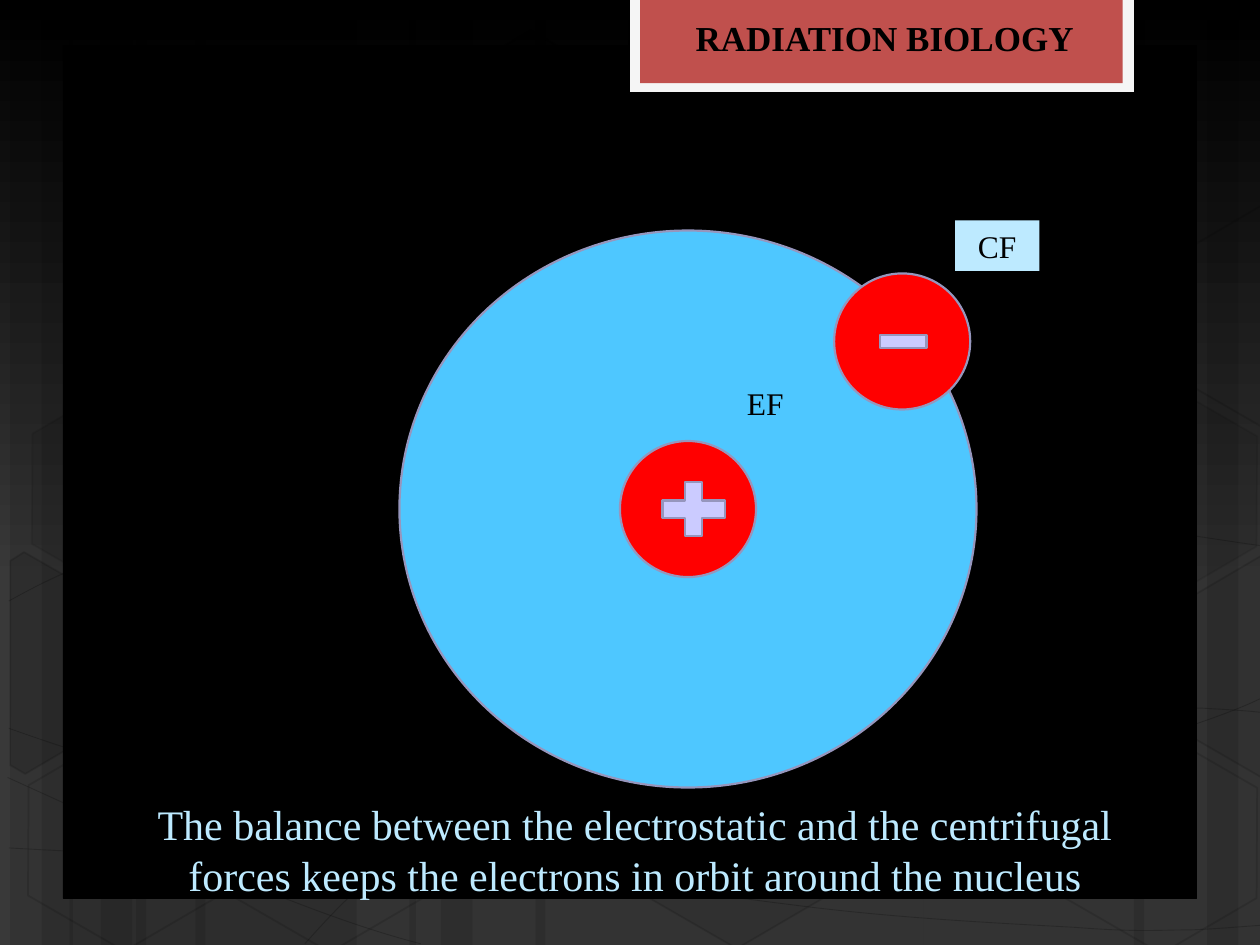
from math import cos, radians, sin

from lxml import etree
from pptx import Presentation
from pptx.dml.color import RGBColor
from pptx.enum.shapes import MSO_SHAPE as Shape
from pptx.enum.text import MSO_ANCHOR as Anchor, PP_ALIGN as Align
from pptx.oxml.ns import qn
from pptx.util import Inches, Pt

FONT = "Times New Roman"
TITLE = "RADIATION BIOLOGY"
BODY = ("The balance between the electrostatic and the centrifugal "
        "forces keeps the electrons in orbit around the nucleus")
BLACK, RED, EDGE, SIGN, PALE = "000000", "FF0000", "9696BD", "CBCBFF", "BDEAFF"
TURN = 30

# Left edge and width of the full-height translucent bars
BARS = [(1.08, 1.75), (0.08, 0.5), (0.33, 0.83), (1.55, 1.75), (0.55, 0.5),
        (0.8, 0.83), (7.33, 1.75), (9.58, 0.5), (9, 0.83), (4.25, 3.08),
        (3.25, 0.5), (3.5, 0.83)]

# Each curve: a start, then two control points and an end per span
CURVES = [
    [(0.07, 6.73), (0.61, 6.76), (1.15, 6.79), (1.9, 6.78), (2.65, 6.77),
     (3.58, 6.75), (4.58, 6.65), (5.58, 6.55), (7, 6.36), (7.92, 6.17),
     (8.83, 5.98), (9.77, 5.68), (10.07, 5.51)],
    [(0.07, 4.77), (0.36, 4.61), (0.65, 4.46), (1.21, 4.31), (1.78, 4.16),
     (2.59, 3.94), (3.47, 3.87), (4.36, 3.8), (5.44, 3.79), (6.54, 3.87),
     (7.64, 3.95), (9.47, 4.26), (10.07, 4.34)],
    [(0.06, 6.17), (1.27, 6.72), (2.47, 7.27), (3.34, 7.49)],
    [(0.07, 5.78), (0.38, 5.89), (0.7, 6), (1.28, 6.16), (1.86, 6.31),
     (2.73, 6.56), (3.57, 6.73), (4.4, 6.9), (5.45, 7.08), (6.28, 7.18),
     (7.11, 7.29), (8, 7.33), (8.53, 7.36), (9.05, 7.4), (9.19, 7.38),
     (9.45, 7.38), (9.71, 7.37), (9.89, 7.35), (10.07, 7.34)],
    [(2.42, 7.49), (2.6, 7.29), (2.78, 7.09), (3.02, 6.91), (3.26, 6.73),
     (3.6, 6.53), (3.88, 6.39), (4.16, 6.25), (4.33, 6.19), (4.7, 6.09),
     (5.06, 5.99), (5.73, 5.85), (6.08, 5.78), (6.44, 5.71), (6.49, 5.71),
     (6.8, 5.69), (7.11, 5.66), (7.6, 5.63), (7.94, 5.62), (8.29, 5.61),
     (8.86, 5.62), (8.86, 5.62), (9.08, 5.62), (9.31, 5.62), (9.53, 5.62),
     (9.71, 5.63), (9.88, 5.64), (9.97, 5.65), (10.06, 5.66), (10.03, 5.65),
     (10.06, 5.66)],
]

# Left, top, fill opacity (None: no fill), line opacity
HEXES = [(3.34, 0.36, 4, 8), (4.97, 5.89, 6, 12), (0.11, 5.91, None, 12),
         (0.14, 3.12, 7, 8), (1.74, 5.92, None, 12), (7.53, 4.53, 10, 12),
         (8.34, 5.93, None, 12), (8.34, 3.14, 7, 8)]

# Hexagons cut by the slide edge: centre, outline as seen, fill opacity
CUTS = [
    ((0.36, 5.35), [(0.08, 4.45), (0.19, 4.38), (0.96, 4.82), (0.95, 5.7),
                    (0.2, 6.14), (0.08, 6.07)], 10),
    ((9.85, 5.2), [(9.26, 4.85), (10.01, 4.41), (10.09, 4.46), (10.09, 6.13),
                   (10.02, 6.17), (9.26, 5.73)], 4),
    ((9.85, 2.41), [(9.26, 2.07), (10.01, 1.63), (10.1, 1.68), (10.09, 3.35),
                    (10.02, 3.39), (9.26, 2.95)], None),
]

PANELS = [((0.5, 0.36, 9, 6.77), BLACK, BLACK, 0.5),
          ((4.99, -0.02, 4.02, 0.76), "F5F5F5", BLACK, 1.25),
          ((5.08, -0.02, 3.83, 0.68), "C0504D", None, 0)]

ATOM = [(Shape.OVAL, (3.17, 1.83, 4.58, 4.42), "4EC7FF"),
        (Shape.OVAL, (4.92, 3.5, 1.08, 1.08), RED),
        (Shape.OVAL, (6.62, 2.17, 1.08, 1.08), RED),
        (Shape.MATH_PLUS, (5.17, 3.75, 0.67, 0.58), SIGN),
        (Shape.MATH_MINUS, (6.92, 2.5, 0.5, 0.42), SIGN)]


def rgb(code):
    return RGBColor.from_string(code)


def tint(fill, code, alpha, node):
    """Give a fill a colour, with an opacity in percent, or no fill at all."""
    if code is None or alpha is None:
        fill.background()
        return
    fill.solid()
    fill.fore_color.rgb = rgb(code)
    if alpha < 100:
        clr = node.find(qn("a:solidFill")).find(qn("a:srgbClr"))
        etree.SubElement(clr, qn("a:alpha")).set("val", str(alpha * 1000))


def paint(shape, fill=None, alpha=100, line=None, width=1, clear=100):
    shape.shadow.inherit = False
    props = shape._element.spPr
    tint(shape.fill, fill, alpha, props)
    tint(shape.line.fill, line, clear, props.find(qn("a:ln")))
    if line:
        shape.line.width = Pt(width)


def add(kind, box, **look):
    shape = slide.shapes.add_shape(kind, *map(Inches, box))
    paint(shape, **look)
    return shape


def trace(points, close, **look):
    pts = [(Inches(x), Inches(y)) for x, y in points]
    pen = slide.shapes.build_freeform(*pts[0])
    pen.add_line_segments(pts[1:], close=close)
    shape = pen.convert_to_shape()
    paint(shape, **look)
    return shape


def bend(shape):
    """Turn each three line segments of an outline into one Bezier span."""
    legs = list(shape._element.iter(qn("a:lnTo")))
    for i in range(0, len(legs), 3):
        span = etree.Element(qn("a:cubicBezTo"))
        legs[i].addprevious(span)
        for leg in legs[i:i + 3]:
            span.append(leg[0])
            leg.getparent().remove(leg)


def unturn(points, mid):
    """Rotate points back about mid, so that the shape itself can be turned."""
    c, s = cos(radians(TURN)), sin(radians(TURN))
    gaps = [(x - mid[0], y - mid[1]) for x, y in points]
    return [(mid[0] + c * x + s * y, mid[1] - s * x + c * y) for x, y in gaps]


def write(shape, text, size, color=BLACK, align=Align.LEFT, bold=False,
          anchor=Anchor.TOP, wrap=True):
    frame = shape.text_frame
    frame.text = text
    frame.word_wrap = wrap
    frame.vertical_anchor = anchor
    para = frame.paragraphs[0]
    para.alignment = align
    para.space_before = Pt(0)
    look = {"name": FONT, "size": Pt(size), "bold": bold}
    font = para.runs[0].font
    for key, val in look.items():
        setattr(font, key, val)
    font.color.rgb = rgb(color)
    return para


def place(holder, box):
    """Move a placeholder to a box, in front of all that is drawn so far."""
    for key, val in zip(("left", "top", "width", "height"), box):
        setattr(holder, key, Inches(val))
    slide.shapes._spTree.append(holder._element)


prs = Presentation()
prs.slide_width, prs.slide_height = Inches(10), Inches(7.5)
slide = prs.slides.add_slide(prs.slide_layouts[1])
title, body = slide.placeholders

back = slide.background.fill
back.gradient()
back.gradient_angle = 270
for stop, (pos, code) in zip(back.gradient_stops, [(0, BLACK), (0.62, "393939")]):
    stop.position = pos
    stop.color.rgb = rgb(code)

for left, width in BARS:
    add(Shape.RECTANGLE, (left, 0, width, 7.5), fill=BLACK, alpha=10)
for knots in CURVES:
    bend(trace(knots, False, line=BLACK, width=0.5, clear=20))
for left, top, alpha, clear in HEXES:
    cell = add(Shape.HEXAGON, (left, top, 1.75, 1.52), fill=BLACK, alpha=alpha,
               line=BLACK, clear=clear)
    cell.rotation = TURN
    cell.adjustments[0] = 0.285
for mid, points, alpha in CUTS:
    cell = trace(unturn(points, mid), True, fill=BLACK, alpha=alpha,
                 line=BLACK, clear=12)
    cell.rotation = TURN
for box, fill, line, width in PANELS:
    add(Shape.RECTANGLE, box, fill=fill, line=line, width=width)

place(body, (0.84, 6.29, 8.33, 1.3))
para = write(body, BODY, 24, PALE, Align.CENTER)
props = para._p.get_or_add_pPr()
props.set("marL", str(Inches(0.07)))
props.set("indent", "0")
etree.SubElement(props, qn("a:buNone"))

for kind, box, fill in ATOM:
    add(kind, box, fill=fill, line=EDGE, width=1.25)
inner = slide.shapes.add_textbox(*map(Inches, (5.83, 3, 0.58, 0.4)))
write(inner, "EF", 18, wrap=False)
outer = add(Shape.RECTANGLE, (7.58, 1.75, 0.67, 0.4), fill=PALE)
write(outer, "CF", 18, align=Align.CENTER, anchor=Anchor.MIDDLE, wrap=False)

place(title, (5.42, 0.08, 3.58, 0.44))
write(title, TITLE, 20, bold=True)

prs.save("out.pptx")
